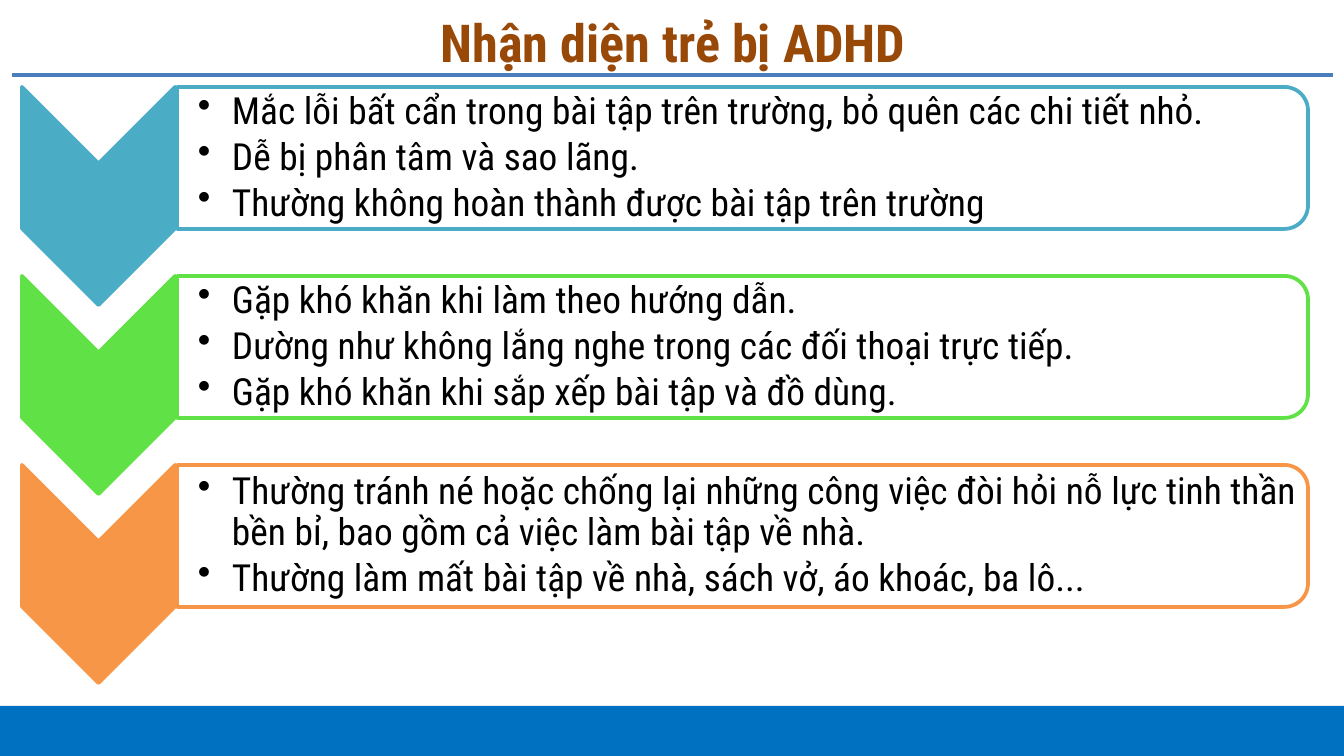
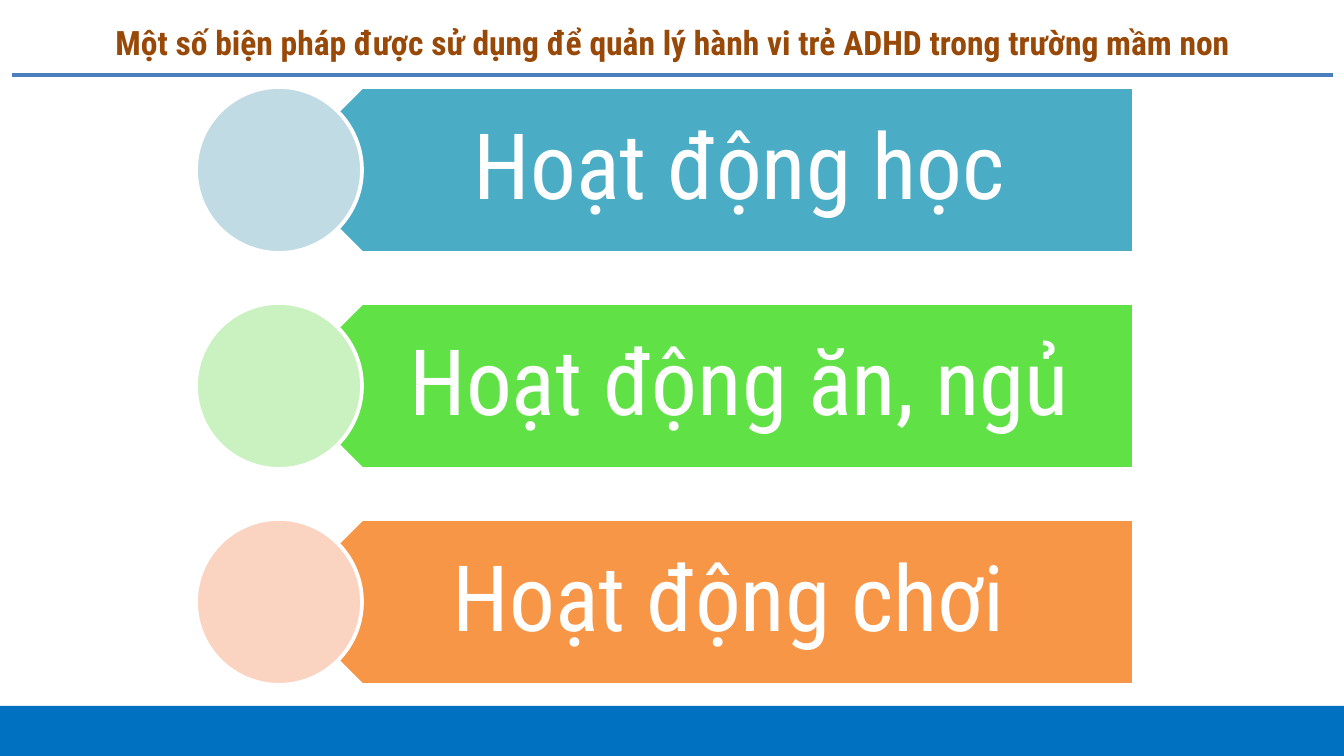
import collections

import pptx
import pptx.dml.color
import pptx.enum.shapes
import pptx.enum.text
import pptx.oxml
import pptx.oxml.ns
import pptx.util
from lxml import etree

Box = collections.namedtuple("Box", "left top width height")

PX = 914400 / 134.4
SLIDE = Box(0, 0, 1344, 756)
FONT = "Roboto Condensed"
SHAPES = pptx.enum.shapes.MSO_SHAPE
CENTER = pptx.enum.text.PP_ALIGN.CENTER
LEFT = pptx.enum.text.PP_ALIGN.LEFT

COLORS = {
    "band": "0070C0",
    "rule": "4B7EBC",
    "title": "984807",
    "white": "FFFFFF",
    "black": "000000",
    "teal": "4BACC6",
    "green": "60E146",
    "orange": "F79646",
    "pale_teal": "C1DBE5",
    "pale_green": "CAF1C0",
    "pale_orange": "FBD3C1",
}

SIGNS_TITLE = "Nhận diện trẻ bị ADHD"
SIGNS = [
    ("teal", [
        "Mắc lỗi bất cẩn trong bài tập trên trường, bỏ quên các chi tiết nhỏ.",
        "Dễ bị phân tâm và sao lãng.",
        "Thường không hoàn thành được bài tập trên trường",
    ]),
    ("green", [
        "Gặp khó khăn khi làm theo hướng dẫn.",
        "Dường như không lắng nghe trong các đối thoại trực tiếp.",
        "Gặp khó khăn khi sắp xếp bài tập và đồ dùng.",
    ]),
    ("orange", [
        "Thường tránh né hoặc chống lại những công việc đòi hỏi nỗ lực tinh thần "
        "bền bỉ, bao gồm cả việc làm bài tập về nhà.",
        "Thường làm mất bài tập về nhà, sách vở, áo khoác, ba lô...",
    ]),
]

MEASURES_TITLE = "Một số biện pháp được sử dụng để quản lý hành vi trẻ ADHD trong trường mầm non"
MEASURES = [
    ("teal", "Hoạt động học"),
    ("green", "Hoạt động ăn, ngủ"),
    ("orange", "Hoạt động chơi "),
]


def px(length):
    return pptx.util.Emu(round(length * PX))


def rgb(name):
    return pptx.dml.color.RGBColor.from_string(COLORS[name])


def apply(target, values):
    for name, value in values.items():
        setattr(target, name, value)


def place(box):
    return {name: px(value) for name, value in box._asdict().items()}


def style_text(paragraph, text, size, color, bold=False):
    paragraph.text = text
    font = paragraph.runs[0].font
    apply(font, {"name": FONT, "size": pptx.util.Pt(size), "bold": bold})
    font.color.rgb = rgb(color)


def add_outline(slide, kind, box, fill, line=None, turn=0):
    if turn == 90:
        box = Box(box.left + (box.width - box.height) / 2,
                  box.top + (box.height - box.width) / 2,
                  box.height, box.width)
    outline = slide.shapes.add_shape(kind, *place(box).values())
    outline.rotation = turn
    outline.shadow.inherit = False
    outline.fill.solid()
    outline.fill.fore_color.rgb = rgb(fill)
    if line:
        outline.line.color.rgb = rgb(line)
        outline.line.width = pptx.util.Pt(2)
    else:
        outline.line.fill.background()
    return outline


def add_text(slide, box, insets, lines, size, color, spacing):
    frame = slide.shapes.add_textbox(*place(box).values()).text_frame
    sides = ("margin_left", "margin_top", "margin_right", "margin_bottom")
    apply(frame, dict(zip(sides, map(px, insets))))
    apply(frame, {
        "word_wrap": True,
        "vertical_anchor": pptx.enum.text.MSO_ANCHOR.MIDDLE,
    })
    for index, line in enumerate(lines):
        paragraph = frame.add_paragraph() if index else frame.paragraphs[0]
        style_text(paragraph, line, size, color)
        apply(paragraph, {"line_spacing": 0.9, **spacing})
    return frame


def add_bullet(paragraph, indent):
    properties = paragraph._p.get_or_add_pPr()
    properties.set("marL", str(px(indent)))
    properties.set("indent", str(-px(indent)))
    bullet = etree.SubElement(properties, pptx.oxml.ns.qn("a:buChar"))
    bullet.set("char", "•")


def add_frame(deck, text, size):
    slide = deck.slides.add_slide(deck.slide_layouts[5])
    add_outline(slide, SHAPES.RECTANGLE, Box(-5, 706, 1354, 50), "band")
    rule = slide.shapes.add_connector(
        pptx.enum.shapes.MSO_CONNECTOR.STRAIGHT, px(12), px(75), px(1333), px(75))
    rule.line.color.rgb = rgb("rule")
    rule.line.width = pptx.util.Pt(2)
    etree.SubElement(rule._element.spPr, pptx.oxml.ns.qn("a:effectLst"))

    title = slide.shapes.title
    apply(title, place(Box(23, 8, 1300, 68)))
    apply(title.text_frame, {
        "word_wrap": True,
        "auto_size": pptx.enum.text.MSO_AUTO_SIZE.NONE,
        "vertical_anchor": pptx.enum.text.MSO_ANCHOR.MIDDLE,
    })
    heading = title.text_frame.paragraphs[0]
    style_text(heading, text, size, "title", bold=True)
    heading.alignment = CENTER
    return slide


def add_sign(slide, box, color, lines):
    arrow_width, panel_height = 153, 142
    add_outline(slide, SHAPES.CHEVRON, box._replace(width=arrow_width),
                color, color, turn=90)
    panel_box = Box(box.left + arrow_width + 2, box.top,
                    box.width - arrow_width - 2, panel_height)
    panel = add_outline(slide, SHAPES.ROUND_2_SAME_RECTANGLE, panel_box,
                        "white", color, turn=90)
    fill_color = panel._element.spPr.find(".//" + pptx.oxml.ns.qn("a:srgbClr"))
    etree.SubElement(fill_color, pptx.oxml.ns.qn("a:alpha")).set("val", "90000")
    text_box = Box(panel_box.left, box.top + 7, panel_box.width - 7, panel_height - 14)
    signs = add_text(slide, text_box, (21, 1, 1, 1), lines, 20, "black",
                     {"space_after": pptx.util.Pt(3), "alignment": LEFT, "level": 1})
    for paragraph in signs.paragraphs:
        add_bullet(paragraph, 34)


def add_measure(slide, box, color, activity):
    radius = box.height / 2
    banner = Box(box.left + radius, box.top, box.width - radius, box.height)
    add_outline(slide, SHAPES.PENTAGON, banner, color, "white", turn=180)
    label = Box(box.left + 125, box.top, box.width - 125, box.height)
    add_text(slide, label, (74, 27, 51, 27), [activity], 49, "white",
             {"space_after": pptx.util.Pt(17), "alignment": CENTER})
    add_outline(slide, SHAPES.OVAL, box._replace(width=box.height),
                "pale_" + color, "white")


def add_rows(slide, first, pitch, add_row, rows):
    for index, row in enumerate(rows):
        add_row(slide, first._replace(top=first.top + index * pitch), *row)


def main():
    deck = pptx.Presentation()
    apply(deck, {"slide_width": px(SLIDE.width), "slide_height": px(SLIDE.height)})
    signs = add_frame(deck, SIGNS_TITLE, 28)
    add_rows(signs, Box(22, 87, 1286, 218), 189, add_sign, SIGNS)
    measures = add_frame(deck, MEASURES_TITLE, 18)
    add_rows(measures, Box(196, 87, 938, 166), 216, add_measure, MEASURES)
    deck.save("out.pptx")


if __name__ == "__main__":
    main()
